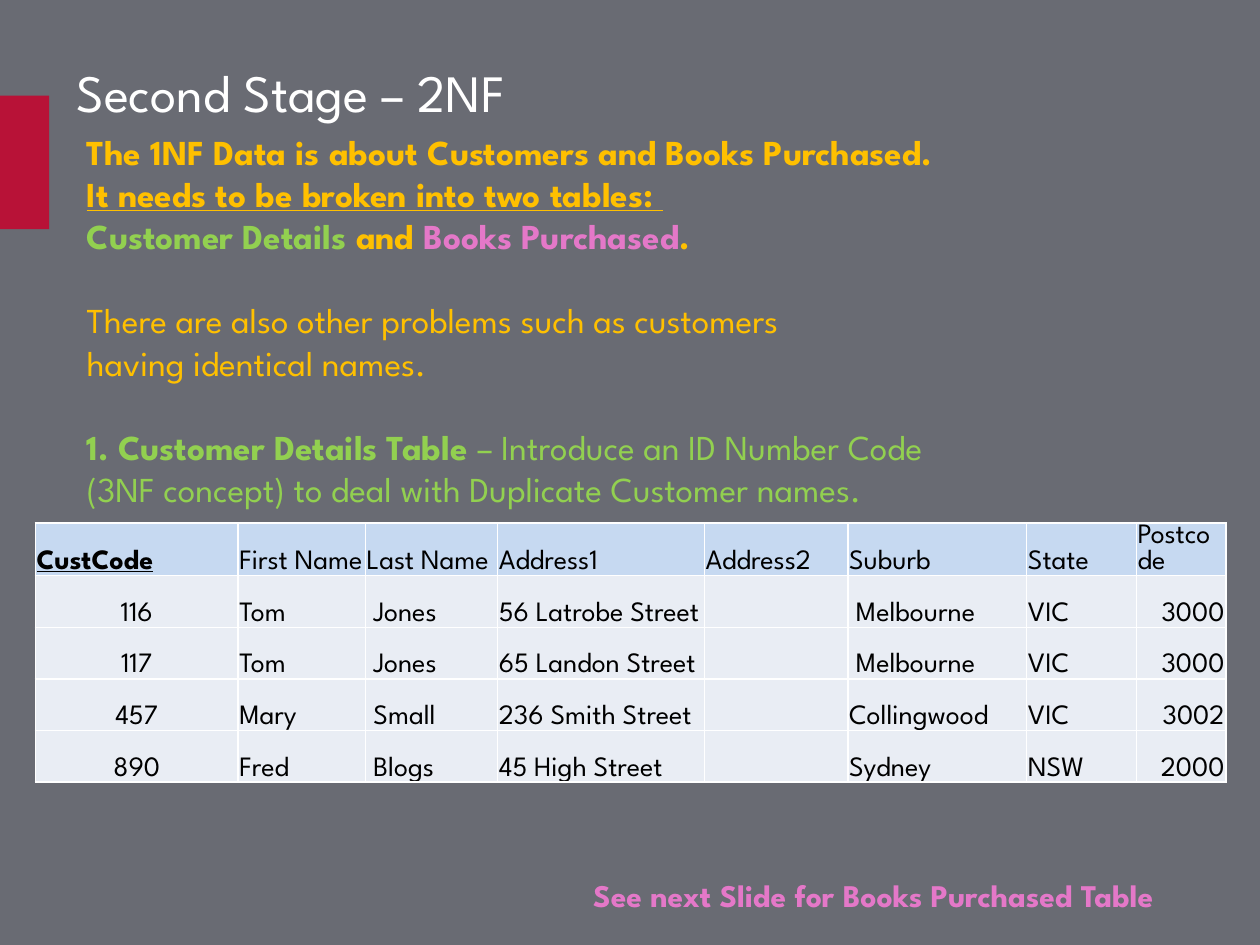
"""Build the slide on bringing book-sale data into second normal form."""
from dataclasses import dataclass

import pptx
import pptx.dml.color
import pptx.enum.shapes
import pptx.enum.text
import pptx.oxml
import pptx.oxml.ns
import pptx.util

Inches = pptx.util.Inches
Pt = pptx.util.Pt
RGBColor = pptx.dml.color.RGBColor
Align = pptx.enum.text.PP_ALIGN
Anchor = pptx.enum.text.MSO_ANCHOR

FONT = "League Spartan"
SLATE = RGBColor(0x69, 0x6B, 0x73)
CRIMSON = RGBColor(0xB8, 0x12, 0x37)
WHITE = RGBColor(0xFF, 0xFF, 0xFF)
BLACK = RGBColor(0x00, 0x00, 0x00)
AMBER = RGBColor(0xFF, 0xC0, 0x00)
GREEN = RGBColor(0x92, 0xD0, 0x50)
PINK = RGBColor(0xE4, 0x78, 0xC8)
HEADER_BLUE = RGBColor(0xC6, 0xD9, 0xF1)
ROW_BLUE = RGBColor(0xE9, 0xED, 0xF4)


@dataclass(frozen=True)
class Span:
    text: str
    color: RGBColor
    size: int = 20
    bold: bool = False
    underline: bool = False


@dataclass(frozen=True)
class Para:
    spans: tuple[Span, ...]
    space_before: int = 0


@dataclass(frozen=True)
class TextBlock:
    left: float
    top: float
    width: float
    height: float
    paras: tuple[Para, ...]
    wrap: bool = True
    anchor: Anchor = Anchor.TOP


@dataclass(frozen=True)
class Column:
    heading: str
    width: float
    align: Align = Align.LEFT
    key: bool = False


TITLE = TextBlock(0.51, 0.1, 9, 1.25, (Para((Span("Second Stage – 2NF", WHITE, 30),)),),
                  anchor=Anchor.MIDDLE)
NOTES = (
    TextBlock(0.59, 0.99, 8.14, 3.13, (
        Para((Span("The 1NF Data is about Customers and Books Purchased.", AMBER, bold=True),)),
        Para((
            Span("It needs to be broken into two tables: \v", AMBER, bold=True, underline=True),
            Span("Customer Details ", GREEN, bold=True),
            Span("and ", AMBER, bold=True),
            Span("Books Purchased", PINK, bold=True),
            Span(".", AMBER, bold=True),
        )),
        Para((Span("There are also other problems such as customers \v"
                   "having identical names.", AMBER),), 24),
        Para((
            Span("1. Customer Details Table ", GREEN, bold=True),
            Span("– Introduce an ID Number Code \v"
                 "(3NF concept) to deal with Duplicate Customer names.", GREEN),
        ), 24),
    ), wrap=False),
    TextBlock(4.61, 6.9, 5.35, 0.4, (
        Para((Span("See next Slide for Books Purchased Table", PINK, 18, bold=True),)),
    )),
)

COLUMNS = (
    Column("CustCode", 1.61, Align.CENTER, key=True),
    Column("First Name", 1.01),
    Column("Last Name", 1.05),
    Column("Address1", 1.64),
    Column("Address2", 1.14),
    Column("Suburb", 1.42),
    Column("State", 0.87),
    Column("Postcode", 0.71, Align.RIGHT),
)
CUSTOMERS = (
    ("116", "Tom", " Jones", "56 Latrobe Street", "", " Melbourne", "VIC", "3000"),
    ("117", "Tom", " Jones", "65 Landon Street", "", " Melbourne", "VIC", "3000"),
    ("457", "Mary", " Small", "236 Smith Street", "", "Collingwood", "VIC", "3002"),
    ("890", "Fred", " Blogs", "45 High Street", "", "Sydney", "NSW", "2000"),
)
ROW_HEIGHT = 0.41
HEADING_PITCH = Pt(14.7)


def add_span(paragraph, span: Span) -> None:
    """Append one formatted run, turning vertical tabs into line breaks."""
    for index, line in enumerate(span.text.split("\v")):
        if index:
            paragraph.add_line_break()
        if not line:
            continue
        run = paragraph.add_run()
        run.text = line
        run.font.name = FONT
        run.font.size = Pt(span.size)
        run.font.bold = span.bold
        run.font.underline = span.underline
        run.font.color.rgb = span.color


def add_text_block(page, block: TextBlock) -> None:
    """Add a text box with its paragraphs."""
    box = page.shapes.add_textbox(Inches(block.left), Inches(block.top),
                                  Inches(block.width), Inches(block.height))
    frame = box.text_frame
    frame.word_wrap = block.wrap
    frame.vertical_anchor = block.anchor
    for index, para in enumerate(block.paras):
        paragraph = frame.add_paragraph() if index else frame.paragraphs[0]
        paragraph.space_before = Pt(para.space_before)
        for span in para.spans:
            add_span(paragraph, span)


def add_borders(cell) -> None:
    """Give a cell thin white borders on all four sides."""
    properties = cell._tc.get_or_add_tcPr()
    for index, side in enumerate(("lnL", "lnR", "lnT", "lnB")):
        properties.insert(index, pptx.oxml.parse_xml(
            f'<a:{side} {pptx.oxml.ns.nsdecls("a")} w="12700"><a:solidFill>'
            f'<a:srgbClr val="{WHITE}"/></a:solidFill></a:{side}>'))


def fill_cell(cell, span: Span, align: Align, fill: RGBColor) -> None:
    """Write one table cell and set its look."""
    cell.margin_left = cell.margin_right = cell.margin_top = Inches(0.01)
    cell.margin_bottom = 0
    cell.vertical_anchor = Anchor.BOTTOM
    cell.fill.solid()
    cell.fill.fore_color.rgb = fill
    add_borders(cell)
    paragraph = cell.text_frame.paragraphs[0]
    paragraph.alignment = align
    if span.text:
        add_span(paragraph, span)


def add_customer_table(page) -> None:
    """Add the table of customer details."""
    rows = len(CUSTOMERS) + 1
    width = sum(column.width for column in COLUMNS)
    table = page.shapes.add_table(rows, len(COLUMNS), Inches(0.28), Inches(4.15),
                                  Inches(width), Inches(ROW_HEIGHT * rows)).table
    for row in table.rows:
        row.height = Inches(ROW_HEIGHT)
    for index, column in enumerate(COLUMNS):
        table.columns[index].width = Inches(column.width)
        heading = Span(column.heading, BLACK, 16, column.key, column.key)
        heading_cell = table.cell(0, index)
        fill_cell(heading_cell, heading, Align.LEFT, HEADER_BLUE)
        heading_cell.text_frame.paragraphs[0].line_spacing = HEADING_PITCH
        for number, customer in enumerate(CUSTOMERS, 1):
            fill_cell(table.cell(number, index), Span(customer[index], BLACK, 16),
                      column.align, ROW_BLUE)


def main() -> None:
    """Build and save the deck."""
    deck = pptx.Presentation()
    deck.slide_width, deck.slide_height = Inches(10), Inches(7.5)
    page = deck.slides.add_slide(deck.slide_layouts[6])
    page.background.fill.solid()
    page.background.fill.fore_color.rgb = SLATE
    accent = page.shapes.add_shape(pptx.enum.shapes.MSO_SHAPE.RECTANGLE, Inches(0),
                                   Inches(0.76), Inches(0.39), Inches(1.06))
    accent.shadow.inherit = False
    accent.fill.solid()
    accent.fill.fore_color.rgb = CRIMSON
    accent.line.fill.background()
    add_text_block(page, TITLE)
    add_customer_table(page)
    for block in NOTES:
        add_text_block(page, block)
    deck.save("out.pptx")


if __name__ == "__main__":
    main()
